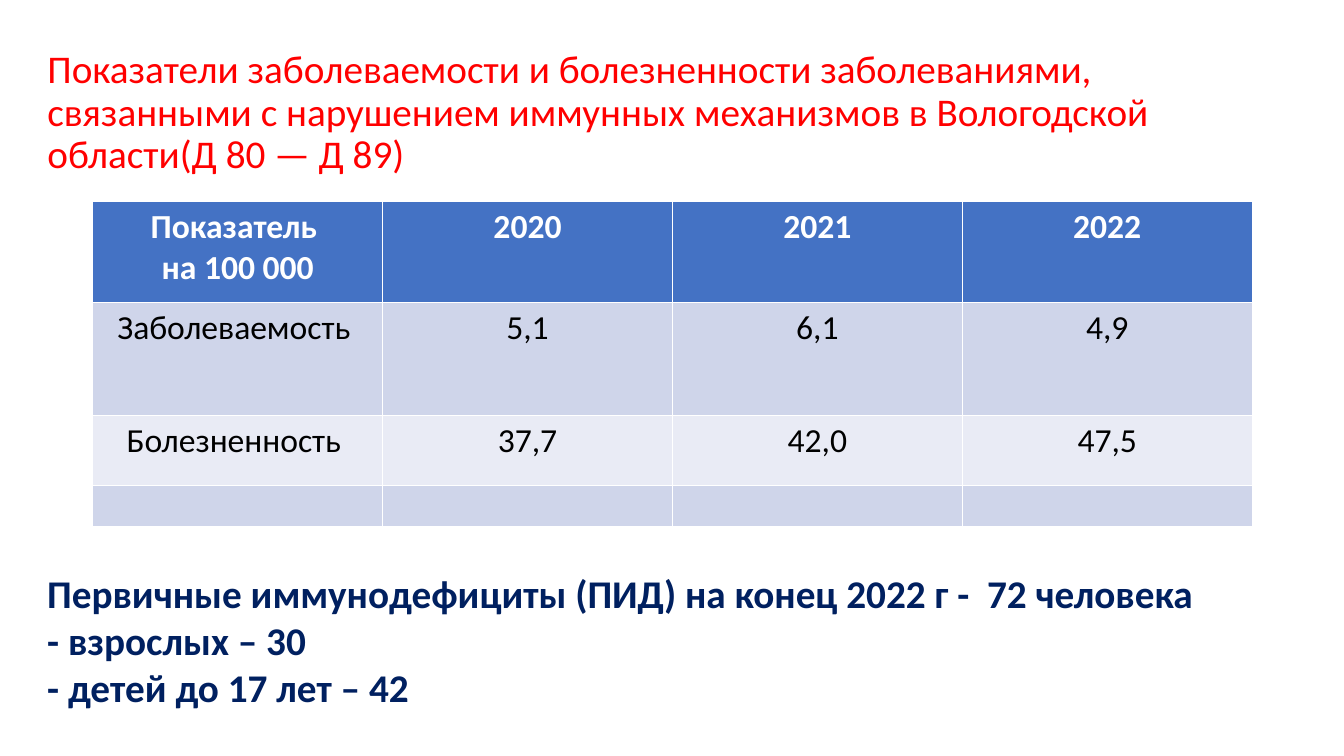
"""Build a slide on immune disease rates in the Vologda region."""
from pptx import Presentation
from pptx.dml.color import RGBColor
from pptx.enum import text as t
from pptx.util import Inches, Pt

TITLE = ("Показатели заболеваемости и болезненности заболеваниями, связанными "
         "с нарушением иммунных механизмов в Вологодской области(Д 80 — Д 89)")
RATES = [
    ("Показатель \nна 100 000", "2020", "2021", "2022"),
    ("Заболеваемость ", "5,1", "6,1", "4,9"),
    ("Болезненность ", "37,7", "42,0", "47,5"),
    ("", "", "", ""),
]
FILLS = ["4472C4", "CFD5EA", "E9EBF5", "CFD5EA"]
HEIGHTS = [1, 1.12, 0.7, 0.4]
NOTE = ("Первичные иммунодефициты (ПИД) на конец 2022 г -  72 человека\n"
        "- взрослых – 30\n"
        "- детей до 17 лет – 42")
LEFT, WIDTH = 0.37, 12.66


def paint(hue):
    return RGBColor.from_string(hue)


def write(frame, words, size, hue, bold, align):
    frame.text = words
    frame.word_wrap = True
    for para in frame.paragraphs:
        para.alignment = align
        for run in para.runs:
            font = run.font
            font.name, font.size, font.bold = "Calibri", Pt(size), bold
            font.color.rgb = paint(hue)


def add_title(slide):
    title = slide.shapes.title
    title.left, title.top = Inches(LEFT), Inches(0.4)
    title.width, title.height = Inches(WIDTH), Inches(1.45)
    frame = title.text_frame
    write(frame, TITLE, 28, "FF0000", False, t.PP_ALIGN.LEFT)
    frame.auto_size = t.MSO_AUTO_SIZE.NONE
    frame.vertical_anchor = t.MSO_ANCHOR.MIDDLE
    frame.paragraphs[0].line_spacing = 0.9


def add_rates(slide):
    table = slide.shapes.add_table(
        len(RATES), len(RATES[0]), Inches(0.92), Inches(2),
        Inches(11.5), Inches(sum(HEIGHTS))).table
    for i, (row, fill, height) in enumerate(zip(RATES, FILLS, HEIGHTS)):
        table.rows[i].height = Inches(height)
        for j, words in enumerate(row):
            cell = table.cell(i, j)
            cell.fill.solid()
            cell.fill.fore_color.rgb = paint(fill)
            if words:
                hue = "000000" if i else "FFFFFF"
                write(cell.text_frame, words, 24, hue, i == 0, t.PP_ALIGN.CENTER)


def add_note(slide):
    box = slide.shapes.add_textbox(
        Inches(LEFT), Inches(5.6), Inches(WIDTH), Inches(1.51))
    write(box.text_frame, NOTE, 28, "002060", True, t.PP_ALIGN.LEFT)


def main():
    deck = Presentation()
    deck.slide_width, deck.slide_height = Inches(13.33), Inches(7.5)
    slide = deck.slides.add_slide(deck.slide_layouts[5])
    add_title(slide)
    add_rates(slide)
    add_note(slide)
    deck.save("out.pptx")


if __name__ == "__main__":
    main()
